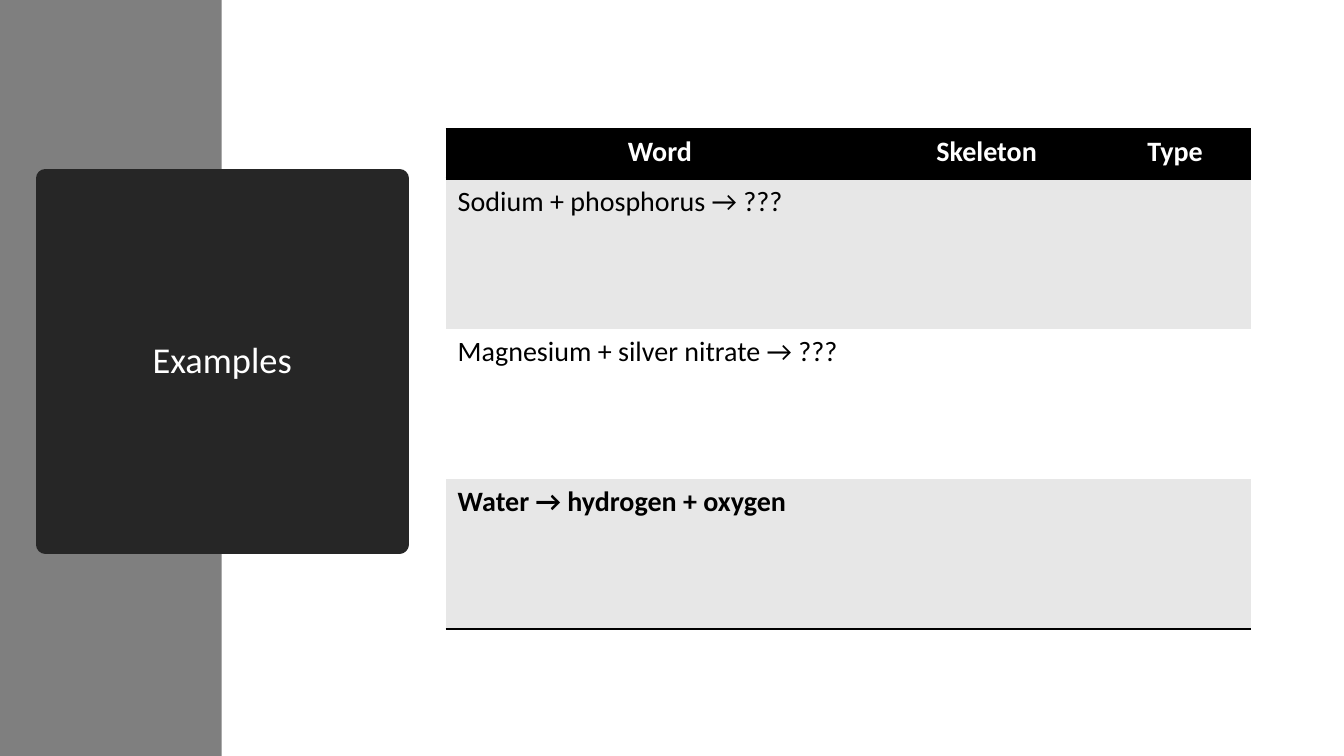
from dataclasses import dataclass

from lxml import etree
from pptx import Presentation
from pptx import util as u
from pptx.dml.color import RGBColor
from pptx.enum import shapes, text
from pptx.oxml.ns import qn


@dataclass(frozen=True)
class Theme:
    """Colours, type sizes and line widths of the slide."""
    font: str = "Calibri"
    band: str = "7F7F7F"
    panel: str = "262626"
    ink: str = "000000"
    paper: str = "FFFFFF"
    stripe: str = "E7E7E7"
    title_size: float = 26
    table_size: float = 20
    panel_line: float = 13.75
    rule: float = 2


THEME = Theme()
WIDTH, HEIGHT = 13.33, 7.5
NO_STYLE = "{2D5ABB26-0587-4C30-8999-92F81FD0307C}"
COLUMNS = (4.25, 2.23, 1.51)
HEADER_HEIGHT, ROW_HEIGHT = 0.49, 1.49
HEADINGS = ("Word", "Skeleton", "Type")
REACTIONS = (
    ("Sodium + phosphorus → ???", False),
    ("Magnesium + silver nitrate → ???", False),
    ("Water → hydrogen + oxygen", True),
)


def paint(fill, color):
    """Give a fill one solid colour."""
    fill.solid()
    fill.fore_color.rgb = RGBColor.from_string(color)


def style(p, size, color, align, bold=False):
    """Set the font and alignment of a paragraph."""
    p.alignment = align
    p.font.name = THEME.font
    p.font.size = u.Pt(size)
    p.font.bold = bold
    p.font.color.rgb = RGBColor.from_string(color)


def add_band(slide, box):
    """Place the side band behind everything else."""
    sp = slide.shapes.add_shape(shapes.MSO_SHAPE.RECTANGLE, *map(u.Inches, box))
    sp.shadow.inherit = False
    paint(sp.fill, THEME.band)
    sp.line.fill.background()
    slide.shapes._spTree.insert(2, sp._element)


def place_title(slide, box, words):
    """Turn the title placeholder into a dark panel with rounded edges."""
    sp = slide.shapes.title
    sp.left, sp.top, sp.width, sp.height = map(u.Inches, box)
    paint(sp.fill, THEME.panel)
    paint(sp.line.fill, THEME.panel)
    sp.line.width = u.Pt(THEME.panel_line)
    etree.SubElement(sp.line._ln, qn("a:round"))
    tf = sp.text_frame
    tf.text = words
    tf.word_wrap = True
    tf.vertical_anchor = text.MSO_ANCHOR.MIDDLE
    p = tf.paragraphs[0]
    p.line_spacing = 0.9
    style(p, THEME.title_size, THEME.paper, text.PP_ALIGN.CENTER)


def add_rule(cell, side):
    """Draw a rule along one side of a cell, such as lnT or lnB."""
    ln = etree.Element(qn(f"a:{side}"), w=str(u.Pt(THEME.rule)))
    fill = etree.SubElement(ln, qn("a:solidFill"))
    etree.SubElement(fill, qn("a:srgbClr"), val=THEME.ink)
    cell._tc.get_or_add_tcPr().insert(0, ln)


def fill_cell(cell, words, fill, color, align, bold, rules):
    """Write and format one table cell."""
    cell.text = words
    cell.margin_left = cell.margin_right = u.Inches(0.12)
    cell.margin_top = cell.margin_bottom = u.Inches(0.06)
    paint(cell.fill, fill)
    style(cell.text_frame.paragraphs[0], THEME.table_size, color, align, bold)
    for side in rules:
        add_rule(cell, side)


def add_reactions(slide, left, top):
    """Place the table of reactions with a dark header and striped rows."""
    heights = [HEADER_HEIGHT] + [ROW_HEIGHT] * len(REACTIONS)
    box = (left, top, sum(COLUMNS), sum(heights))
    frame = slide.shapes.add_table(len(heights), len(COLUMNS), *map(u.Inches, box))
    table = frame.table
    table._tbl.tblPr.find(qn("a:tableStyleId")).text = NO_STYLE
    for column, width in zip(table.columns, COLUMNS):
        column.width = u.Inches(width)
    for row, height in zip(table.rows, heights):
        row.height = u.Inches(height)

    for cell, heading in zip(table.rows[0].cells, HEADINGS):
        fill_cell(cell, heading, THEME.ink, THEME.paper,
                  text.PP_ALIGN.CENTER, True, ("lnB", "lnT"))
    for i, (reaction, bold) in enumerate(REACTIONS, 1):
        fill = THEME.stripe if i % 2 else THEME.paper
        rules = ("lnB",) if i == len(REACTIONS) else ()
        for j, cell in enumerate(table.rows[i].cells):
            fill_cell(cell, "" if j else reaction, fill, THEME.ink,
                      text.PP_ALIGN.LEFT, bold, rules)


def build_examples(prs):
    """Add the slide with a title panel and a table of examples."""
    slide = prs.slides.add_slide(prs.slide_layouts[5])
    add_band(slide, (0, 0, WIDTH * 0.165, HEIGHT))
    place_title(slide, (0.45, 1.77, 3.51, 3.63), "Examples")
    add_reactions(slide, 4.42, 1.28)


def main():
    """Build and save the presentation."""
    prs = Presentation()
    prs.slide_width, prs.slide_height = u.Inches(WIDTH), u.Inches(HEIGHT)
    build_examples(prs)
    prs.save("out.pptx")


if __name__ == "__main__":
    main()
